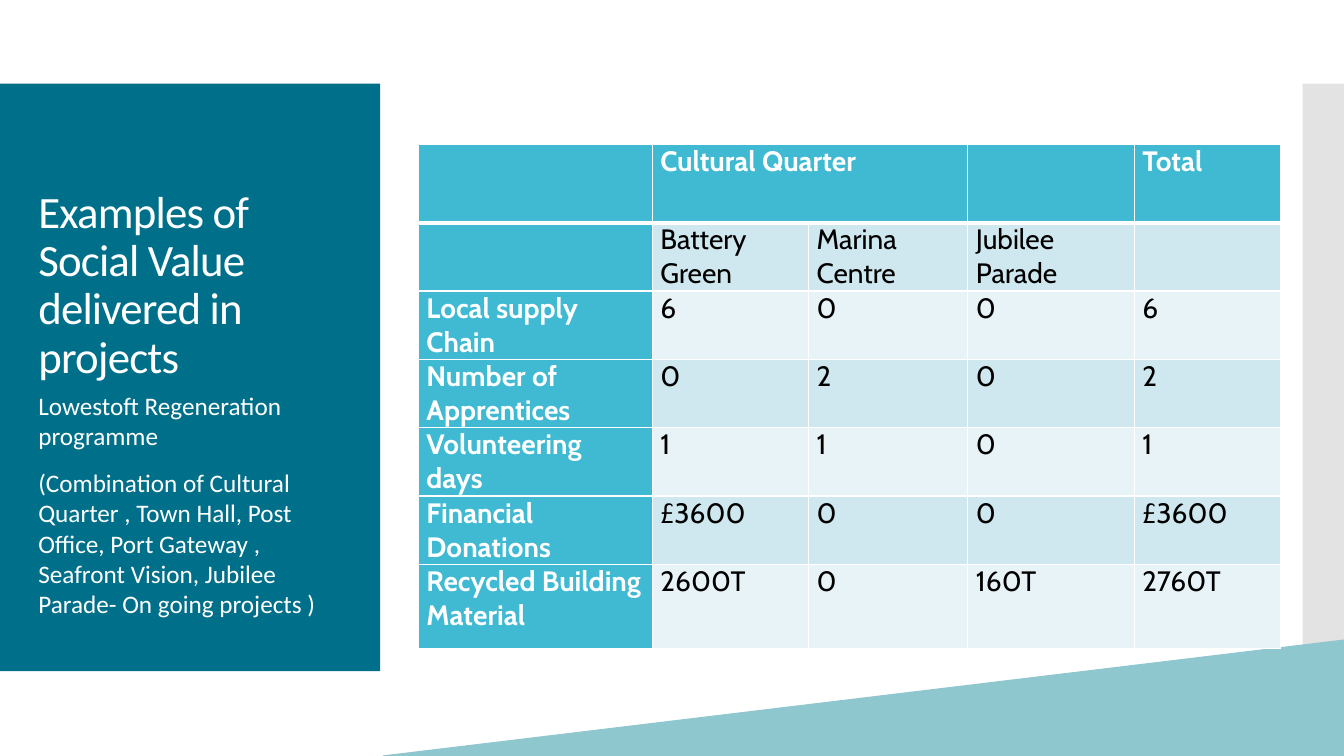
from dataclasses import dataclass

from lxml.etree import SubElement
from pptx import Presentation
from pptx.dml.color import RGBColor
from pptx.enum.shapes import MSO_SHAPE
from pptx.enum.text import MSO_ANCHOR, MSO_AUTO_SIZE, PP_ALIGN
from pptx.oxml.ns import qn
from pptx.util import Inches, Pt


@dataclass(frozen=True)
class Theme:
    """Colours, fonts and type sizes of the slide."""
    panel: str = "00708A"
    strip: str = "C8C8C8"
    wedge: str = "8EC7CE"
    header: str = "40BAD2"
    bands: tuple = ("CFE7EE", "E8F3F7")
    light: str = "FFFFFF"
    dark: str = "000000"
    text_font: str = "Calibri"
    table_font: str = "Cabin"
    title_size: int = 32
    body_size: int = 18
    table_size: int = 20


THEME = Theme()
TITLE = "Examples of  Social Value delivered in projects"
NOTES = [
    "Lowestoft Regeneration programme",
    "(Combination of Cultural Quarter , Town Hall, Post Office, Port Gateway , "
    "Seafront Vision, Jubilee Parade- On going projects )",
]
ROWS = [
    ["", "Cultural Quarter", "", "", "Total"],
    ["", "Battery Green", "Marina Centre", "Jubilee Parade", ""],
    ["Local supply Chain", "6", "0", "0", "6"],
    ["Number of Apprentices", "0", "2", "0", "2"],
    ["Volunteering days", "1", "1", "0", "1"],
    ["Financial Donations", "£3600", "0", "0", "£3600"],
    ["Recycled Building Material", "2600T", "0", "160T", "2760T"],
]
COL_WIDTHS = [2.32, 1.55, 1.58, 1.65, 1.45]
ROW_HEIGHTS = [0.78] + [0.64] * 5 + [0.84]


def rgb(color):
    """Turn a hex string into a colour."""
    return RGBColor.from_string(color)


def style_run(r, font, size, color, bold=False):
    """Format one run."""
    r.font.name = font
    r.font.size = Pt(size)
    r.font.bold = bold
    r.font.color.rgb = rgb(color)


def place(shape, x, y, w, h):
    """Move a shape to a box given in inches."""
    shape.left, shape.top, shape.width, shape.height = map(Inches, (x, y, w, h))


def add_block(s, kind, box, color):
    """Add a plain filled shape without outline."""
    sp = s.shapes.add_shape(kind, *map(Inches, box))
    sp.shadow.inherit = False
    sp.fill.solid()
    sp.fill.fore_color.rgb = rgb(color)
    sp.line.fill.background()
    return sp


def add_backdrop(s, x, y, w, h):
    """Draw the side panel, right strip and bottom wedge in the slide box."""
    band_y, band_h = y + 0.83, h - 1.67
    add_block(s, MSO_SHAPE.RECTANGLE, (x, band_y, 3.77, band_h), THEME.panel)
    strip = add_block(s, MSO_SHAPE.RECTANGLE,
                      (x + w - 0.41, band_y, 0.41, band_h), THEME.strip)
    strip_color = strip.element.spPr.find(qn("a:solidFill"))[0]
    SubElement(strip_color, qn("a:alpha"), val="50000")
    wedge = add_block(s, MSO_SHAPE.ISOSCELES_TRIANGLE,
                      (x + 3.8, y + h - 1.15, w - 3.8, 1.15), THEME.wedge)
    wedge.adjustments[0] = 1
    wedge.line.color.rgb = rgb(THEME.wedge)
    wedge.line.width = Pt(0.85)


def add_caption(s, x, y, w, h):
    """Fill the title and body placeholders, stacked in the given box."""
    title, body = s.shapes.title, s.placeholders[1]
    title_h = 2.6
    place(title, x, y, w, title_h)
    place(body, x, y + title_h - 0.03, w, h - title_h + 0.03)
    title.text_frame.text = TITLE
    body.text_frame.text = NOTES[0]
    body.text_frame.add_paragraph().text = NOTES[1]
    for ph, size, anchor in ((title, THEME.title_size, MSO_ANCHOR.BOTTOM),
                             (body, THEME.body_size, MSO_ANCHOR.TOP)):
        ph.element.getparent().append(ph.element)
        tf = ph.text_frame
        tf.word_wrap = True
        tf.auto_size = MSO_AUTO_SIZE.NONE
        tf.vertical_anchor = anchor
        for p in tf.paragraphs:
            p.alignment = PP_ALIGN.LEFT
            style_run(p.runs[0], THEME.text_font, size, THEME.light)
    p = title.text_frame.paragraphs[0]
    p.line_spacing = 0.9
    p.runs[0].font._element.set("spc", "-60")
    for p in body.text_frame.paragraphs:
        p.space_before = Pt(12)
        pPr = p._p.get_or_add_pPr()
        pPr.set("marL", "0")
        pPr.set("indent", "0")
        SubElement(pPr, qn("a:buNone"))


def set_borders(cell, bottom):
    """Draw white cell borders with the given bottom width in points."""
    tcPr = cell._tc.get_or_add_tcPr()
    for i, (side, width) in enumerate(zip("LRTB", (1, 1, 1, bottom))):
        ln = tcPr.makeelement(qn(f"a:ln{side}"), {"w": str(Pt(width))})
        fill = SubElement(ln, qn("a:solidFill"))
        SubElement(fill, qn("a:srgbClr"), val=THEME.light)
        tcPr.insert(i, ln)


def add_value_table(s, x, y, w, h):
    """Add the social value table in the given box."""
    table = s.shapes.add_table(len(ROWS), len(COL_WIDTHS),
                               *map(Inches, (x, y, w, h))).table
    for col, width in zip(table.columns, COL_WIDTHS):
        col.width = Inches(width)
    for row, height in zip(table.rows, ROW_HEIGHTS):
        row.height = Inches(height)
    for i, row in enumerate(ROWS):
        for j, text in enumerate(row):
            cell = table.cell(i, j)
            head = i == 0 or j == 0
            cell.fill.solid()
            cell.fill.fore_color.rgb = rgb(THEME.header if head else THEME.bands[(i - 1) % 2])
            set_borders(cell, 3 if i == 0 else 1)
            if text:
                cell.margin_left = cell.margin_right = Inches(0.08)
                cell.margin_top = cell.margin_bottom = 0
                cell.text_frame.text = text
                style_run(cell.text_frame.paragraphs[0].runs[0], THEME.table_font,
                          THEME.table_size, THEME.light if head else THEME.dark, head)
    table.cell(0, 1).merge(table.cell(0, 2))


def main():
    """Build and save the slide."""
    prs = Presentation()
    prs.slide_width, prs.slide_height = Inches(13.33), Inches(7.5)
    s = prs.slides.add_slide(prs.slide_layouts[1])
    add_backdrop(s, 0, 0, 13.33, 7.5)
    add_caption(s, 0.28, 1.25, 3.1, 5.11)
    add_value_table(s, 4.15, 1.43, sum(COL_WIDTHS), sum(ROW_HEIGHTS))
    prs.save("out.pptx")


if __name__ == "__main__":
    main()
